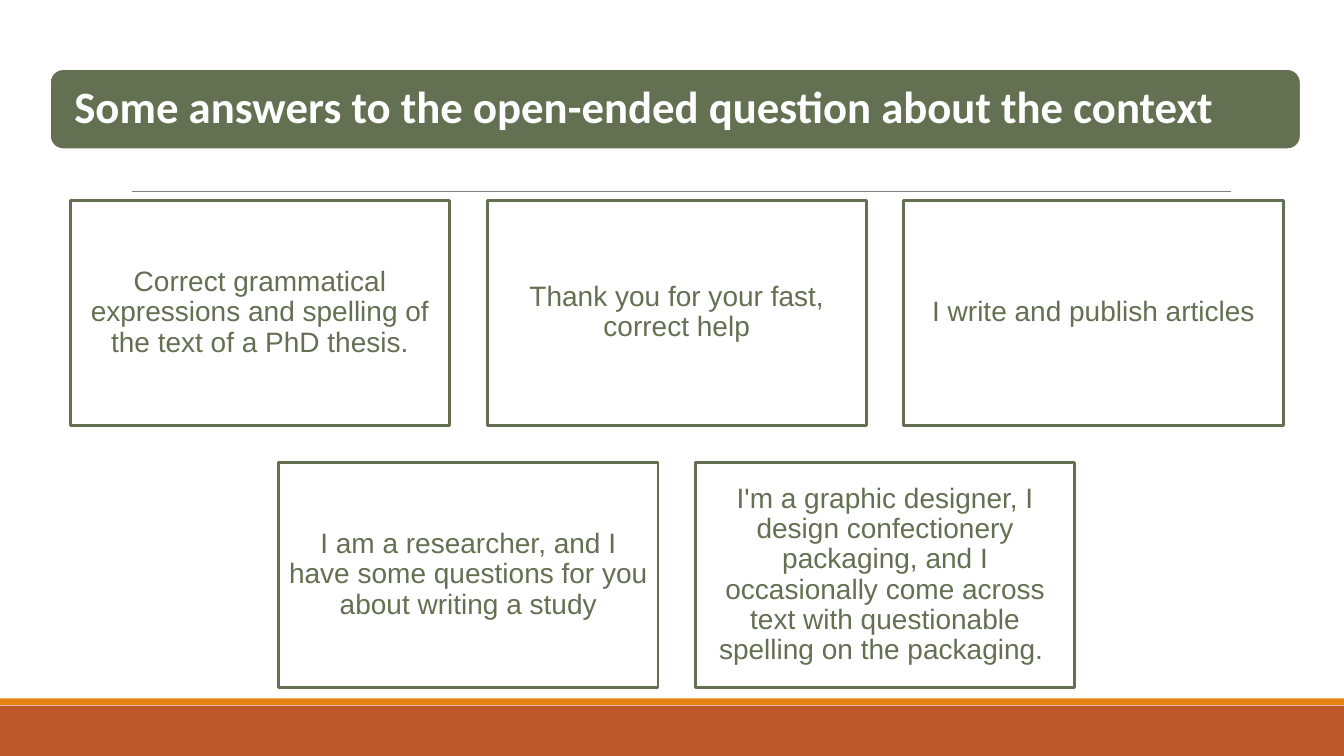
"""Build a slide of survey answers laid out as cards under a title bar."""
from dataclasses import dataclass

from lxml import etree
from pptx import Presentation
from pptx.dml.color import RGBColor
from pptx.enum import shapes, text
from pptx.oxml import ns
from pptx.util import Pt

HUES = {"white": "FFFFFF", "green": "637052", "rust": "BD582C",
        "gold": "E48312", "gray": "7F7F7F"}
RECT = shapes.MSO_SHAPE.RECTANGLE
ROUND = shapes.MSO_SHAPE.ROUNDED_RECTANGLE
WIDE, HIGH = 960, 540
CARD_W, CARD_H = 270.9, 160.6
STEP_X, STEP_Y = 297.7, 187.2
MID, TOP = 483.4, 143.1
ROWS = [
    ["Correct grammatical expressions and spelling of the text of a PhD thesis.",
     "Thank you for your fast, correct help",
     "I write and publish articles"],
    ["I am a researcher, and I have some questions for you about writing a study",
     "I'm a graphic designer, I design confectionery packaging, and I "
     "occasionally come across text with questionable spelling on the packaging. "],
]


@dataclass
class Box:
    left: float
    top: float
    width: float
    height: float
    fill: str
    edge: str = ""
    kind: int = RECT


@dataclass
class Style:
    font: dict
    hue: str
    align: int
    pad: float
    side: float


TITLE = Style({"name": "Calibri", "size": Pt(32), "bold": True}, "white",
              text.PP_ALIGN.LEFT, 9.4, 15)
BODY = Style({"name": "Arial", "size": Pt(20), "bold": False}, "green",
             text.PP_ALIGN.CENTER, 6.5, 6.5)


def tint(name: str) -> RGBColor:
    return RGBColor.from_string(HUES[name])


def apply(item, vals: dict) -> None:
    for key, val in vals.items():
        setattr(item, key, val)


def draw(slide, box: Box):
    shape = slide.shapes.add_shape(
        box.kind, Pt(box.left), Pt(box.top), Pt(box.width), Pt(box.height))
    shape.shadow.inherit = False
    shape.fill.solid()
    shape.fill.fore_color.rgb = tint(box.fill)
    if box.edge:
        shape.line.color.rgb = tint(box.edge)
        shape.line.width = Pt(2)
    else:
        shape.line.fill.background()
    return shape


def write(shape, words: str, style: Style) -> None:
    frame = shape.text_frame
    pad, side = Pt(style.pad), Pt(style.side)
    apply(frame, {"word_wrap": True, "vertical_anchor": text.MSO_ANCHOR.MIDDLE,
                  "margin_top": pad, "margin_bottom": pad,
                  "margin_left": side, "margin_right": side})
    para = frame.paragraphs[0]
    apply(para, {"alignment": style.align, "line_spacing": 0.9})
    run = para.add_run()
    run.text = words
    apply(run.font, style.font)
    run.font.color.rgb = tint(style.hue)


def rule(slide, left: float, right: float, top: float) -> None:
    line = slide.shapes.add_connector(
        shapes.MSO_CONNECTOR.STRAIGHT, Pt(left), Pt(top), Pt(right), Pt(top))
    line.line.color.rgb = tint("gray")
    line.line.width = Pt(0.75)
    etree.SubElement(line._element.spPr, ns.qn("a:effectLst"))


def main() -> None:
    deck = Presentation()
    apply(deck, {"slide_width": Pt(WIDE), "slide_height": Pt(HIGH)})
    slide = deck.slides.add_slide(deck.slide_layouts[6])
    draw(slide, Box(0, 504, WIDE, 36, "rust"))
    draw(slide, Box(0, 498.8, WIDE, 5, "gold"))
    rule(slide, 94.3, 879, 136.6)
    bar = draw(slide, Box(35.3, 49, 894.2, 58, "green", "white", ROUND))
    write(bar, "Some answers to the open-ended question about the context", TITLE)
    for row, cards in enumerate(ROWS):
        left = MID - (CARD_W + STEP_X * (len(cards) - 1)) / 2
        for col, words in enumerate(cards):
            card = draw(slide, Box(left + col * STEP_X, TOP + row * STEP_Y,
                                   CARD_W, CARD_H, "white", "green"))
            write(card, words, BODY)
    deck.save("out.pptx")


if __name__ == "__main__":
    main()
